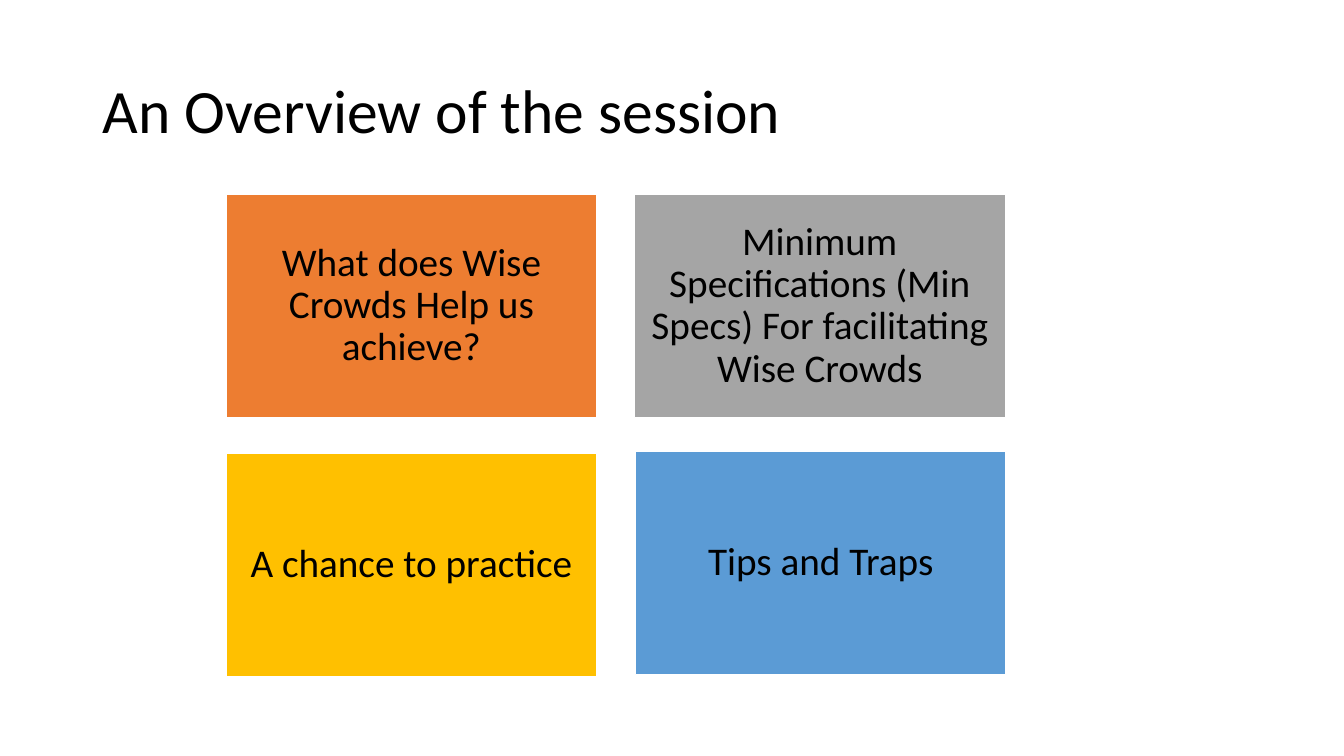
from pptx import Presentation
from pptx.dml.color import RGBColor
from pptx.enum import shapes, text
from pptx.util import Inches, Pt

BLACK = RGBColor(0x00, 0x00, 0x00)
WHITE = RGBColor(0xFF, 0xFF, 0xFF)
ORANGE = RGBColor(0xED, 0x7D, 0x31)
GRAY = RGBColor(0xA5, 0xA5, 0xA5)
GOLD = RGBColor(0xFF, 0xC0, 0x00)
BLUE = RGBColor(0x5B, 0x9B, 0xD5)

TOPICS = [
    ("What does Wise Crowds Help us achieve?", ORANGE, 2.24, 1.93),
    ("Minimum Specifications (Min Specs) For facilitating Wise Crowds", GRAY, 6.29, 1.93),
    ("A chance to practice", GOLD, 2.24, 4.5),
    ("Tips and Traps", BLUE, 6.3, 4.48),
]


def write_text(shape, words, size, alignment):
    frame = shape.text_frame
    frame.text = words
    frame.word_wrap = True
    frame.auto_size = text.MSO_AUTO_SIZE.NONE
    frame.vertical_anchor = text.MSO_ANCHOR.MIDDLE
    paragraph = frame.paragraphs[0]
    paragraph.alignment = alignment
    paragraph.line_spacing = 0.9
    paragraph.font.name = "Calibri"
    paragraph.font.size = Pt(size)
    paragraph.font.color.rgb = BLACK


def set_title(slide, words):
    title = slide.shapes.title
    title.left, title.top = Inches(0.92), Inches(0.4)
    title.width, title.height = Inches(11.5), Inches(1.45)
    write_text(title, words, 44, text.PP_ALIGN.LEFT)


def add_topic(slide, words, color, left, top):
    box = slide.shapes.add_shape(
        shapes.MSO_SHAPE.RECTANGLE,
        Inches(left), Inches(top), Inches(3.68), Inches(2.21))
    box.shadow.inherit = False
    box.fill.solid()
    box.fill.fore_color.rgb = color
    box.line.color.rgb = WHITE
    box.line.width = Pt(1)
    frame = box.text_frame
    frame.margin_left = frame.margin_right = Inches(0.12)
    frame.margin_top = frame.margin_bottom = Inches(0.12)
    write_text(box, words, 28, text.PP_ALIGN.CENTER)


def main():
    """Build the session overview slide and save it."""
    presentation = Presentation()
    presentation.slide_width = Inches(13.33)
    presentation.slide_height = Inches(7.5)
    slide = presentation.slides.add_slide(presentation.slide_layouts[5])
    set_title(slide, "An Overview of the session")
    for topic in TOPICS:
        add_topic(slide, *topic)
    presentation.save("out.pptx")


if __name__ == "__main__":
    main()
